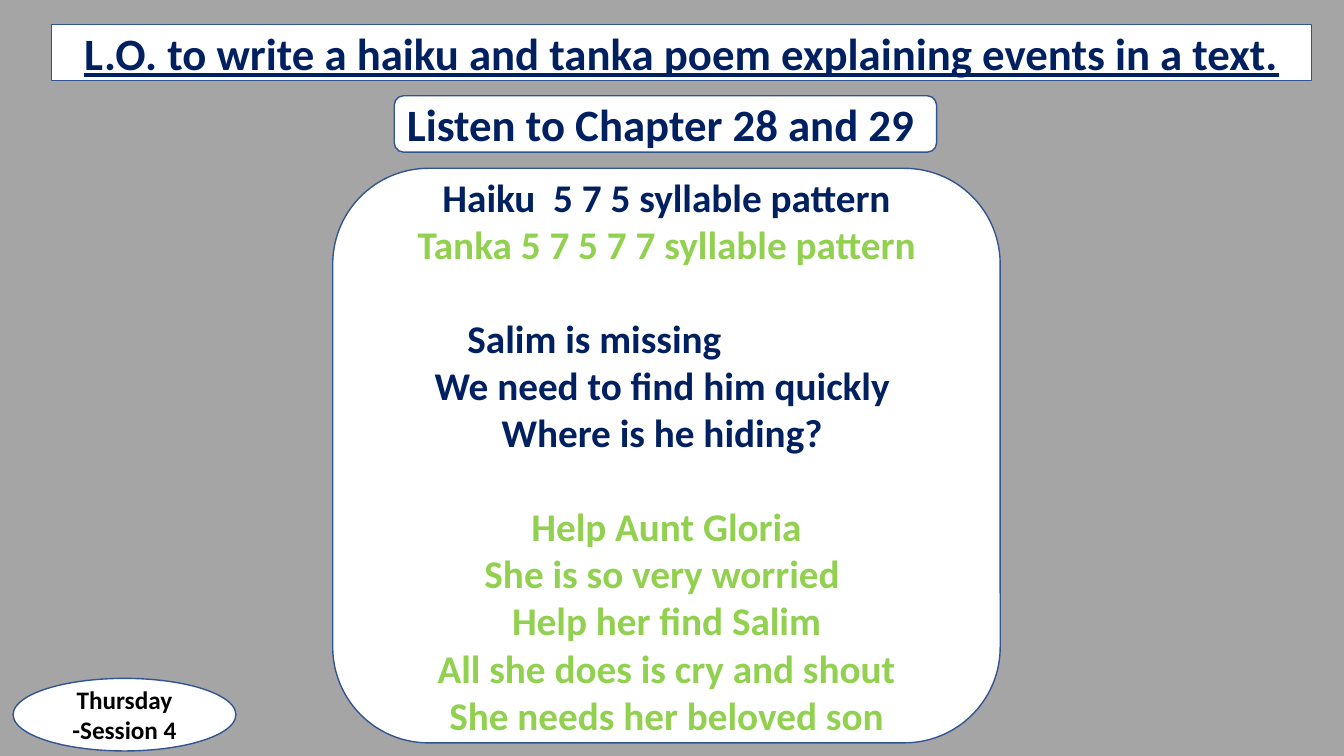
from pptx import Presentation
from pptx.dml.color import RGBColor
from pptx.enum import shapes, text
from pptx.util import Inches, Pt

GREY = RGBColor(0xA5, 0xA5, 0xA5)
WHITE = RGBColor(0xFF, 0xFF, 0xFF)
BLACK = RGBColor(0x00, 0x00, 0x00)
OUTLINE = RGBColor(0x32, 0x54, 0x91)
NAVY = RGBColor(0x00, 0x20, 0x60)
GREEN = RGBColor(0x92, 0xD0, 0x50)

PATTERNS = [
    ("Haiku  5 7 5 syllable pattern", NAVY),
    ("Tanka 5 7 5 7 7 syllable pattern", GREEN),
]
HAIKU = [
    "Salim is missing",
    "We need to find him quickly ",
    "Where is he hiding? ",
]
TANKA = [
    "Help Aunt Gloria",
    "She is so very worried ",
    "Help her find Salim",
    "All she does is cry and shout",
    "She needs her beloved son",
]


def style_panel(panel):
    """Give a panel its white fill, blue outline and centred anchor."""
    panel.shadow.inherit = False
    panel.fill.solid()
    panel.fill.fore_color.rgb = WHITE
    panel.line.color.rgb = OUTLINE
    panel.line.width = Pt(1)
    frame = panel.text_frame
    frame.word_wrap = True
    frame.auto_size = text.MSO_AUTO_SIZE.NONE
    frame.vertical_anchor = text.MSO_ANCHOR.MIDDLE


def style_text(para, size, color, align=text.PP_ALIGN.CENTER):
    """Set the alignment of a paragraph and the bold font of its runs."""
    para.alignment = align
    for span in para.runs:
        span.font.name = "Calibri"
        span.font.size = Pt(size)
        span.font.bold = True
        span.font.color.rgb = color


def add_panel(page, kind, box):
    """Add a styled preset shape that fills the box."""
    panel = page.shapes.add_shape(kind, *map(Inches, box))
    style_panel(panel)
    return panel


def add_objective(page, box):
    """Place the underlined learning objective in the title placeholder."""
    title = page.shapes.title
    title.left, title.top, title.width, title.height = map(Inches, box)
    style_panel(title)
    title.text_frame.text = "L.O. to write a haiku and tanka poem explaining events in a text."
    para = title.text_frame.paragraphs[0]
    style_text(para, 32, NAVY)
    para.runs[0].font.underline = True


def add_session(page, box):
    """Add the oval with the day and session."""
    oval = add_panel(page, shapes.MSO_SHAPE.OVAL, box)
    oval.text_frame.text = "Thursday -Session 4"
    style_text(oval.text_frame.paragraphs[0], 18, BLACK)


def add_chapters(page, box):
    """Add the rounded label naming the chapters."""
    label = add_panel(page, shapes.MSO_SHAPE.ROUNDED_RECTANGLE, box)
    label.text_frame.text = "Listen to Chapter 28 and 29"
    style_text(label.text_frame.paragraphs[0], 32, NAVY, text.PP_ALIGN.LEFT)


def add_poems(page, box):
    """Add the rounded panel with the patterns and both poems."""
    panel = add_panel(page, shapes.MSO_SHAPE.ROUNDED_RECTANGLE, box)
    lines = PATTERNS + [(line, NAVY) for line in HAIKU] + [(line, GREEN) for line in TANKA]
    frame = panel.text_frame
    frame.text = "\n".join(line for line, color in lines)
    for para, (line, color) in zip(frame.paragraphs, lines):
        style_text(para, 28, color)
        if line in (HAIKU[0], TANKA[0]):
            para.space_before = Pt(33.6)
        if line == HAIKU[0]:
            para.alignment = text.PP_ALIGN.LEFT
            para._p.get_or_add_pPr().set("marL", str(Inches(0.96)))


def main():
    """Build the deck with its poem slide."""
    deck = Presentation()
    deck.slide_width, deck.slide_height = Inches(13.33), Inches(7.5)
    page = deck.slides.add_slide(deck.slide_layouts[5])
    page.background.fill.solid()
    page.background.fill.fore_color.rgb = GREY
    add_objective(page, (0.51, 0.24, 12.5, 0.56))
    add_session(page, (0.13, 6.73, 2.21, 0.72))
    add_chapters(page, (3.91, 0.95, 5.38, 0.56))
    add_poems(page, (3.3, 1.67, 6.62, 5.7))
    deck.save("out.pptx")


if __name__ == "__main__":
    main()
